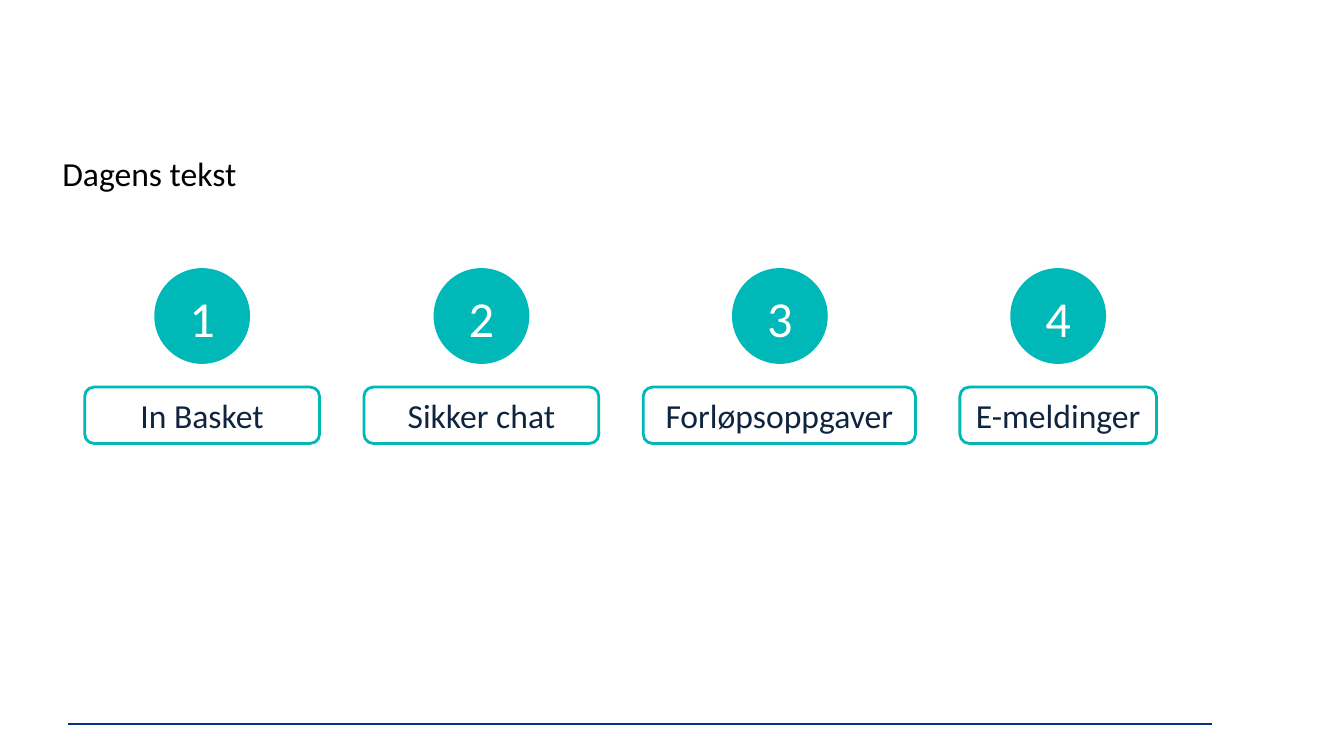
"""Build a slide with four numbered topics for the day."""
from lxml import etree
from pptx import Presentation
from pptx.dml.color import RGBColor
from pptx.enum.shapes import MSO_CONNECTOR, MSO_SHAPE
from pptx.enum.text import MSO_ANCHOR, PP_ALIGN
from pptx.oxml.ns import qn
from pptx.util import Pt

PX = 9144
TEAL = "00B8B7"
NAVY = "0F243E"
WHITE = "FFFFFF"
LEFT, CENTER = PP_ALIGN.LEFT, PP_ALIGN.CENTER
TOP, MIDDLE = MSO_ANCHOR.TOP, MSO_ANCHOR.MIDDLE
OVAL, ROUNDED = MSO_SHAPE.OVAL, MSO_SHAPE.ROUNDED_RECTANGLE


def rgb(color):
    return RGBColor.from_string(color)


def write(sp, text, size=24, color=NAVY, align=CENTER, anchor=MIDDLE):
    tf = sp.text_frame
    tf.word_wrap = True
    tf.vertical_anchor = anchor
    p = tf.paragraphs[0]
    p.alignment = align
    r = p.add_run()
    r.text = text
    r.font.name = "Calibri"
    r.font.size = Pt(size)
    r.font.color.rgb = rgb(color)


prs = Presentation()
prs.slide_width = 1333 * PX
prs.slide_height = 750 * PX
s = prs.slides.add_slide(prs.slide_layouts[6])

rule = s.shapes.add_connector(MSO_CONNECTOR.STRAIGHT, 67 * PX, 718 * PX, 1202 * PX, 718 * PX)
rule.line.color.rgb = rgb("043585")
rule.line.width = Pt(1.25)
etree.SubElement(rule._element.spPr, qn("a:effectLst"))

heading = s.shapes.add_textbox(52 * PX, 147 * PX, 1167 * PX, 55 * PX)
write(heading, "Dagens tekst", color="000000", align=LEFT, anchor=TOP)

topics = [("In Basket", 233), ("Sikker chat", 233), ("Forløpsoppgaver", 270), ("E-meldinger", 195)]
gap, diameter, number_width = 44, 95, 99
left = 84
for number, (topic, width) in enumerate(topics, 1):
    group = s.shapes.add_group_shape()
    center = left + width // 2

    box = group.shapes.add_shape(ROUNDED, left * PX, 384 * PX, width * PX, 56 * PX)
    box.shadow.inherit = False
    box.fill.solid()
    box.fill.fore_color.rgb = rgb(WHITE)
    box.line.color.rgb = rgb(TEAL)
    box.line.width = Pt(2)
    write(box, topic)

    circle = group.shapes.add_shape(
        OVAL, (center - diameter // 2) * PX, 266 * PX, diameter * PX, diameter * PX)
    circle.shadow.inherit = False
    circle.fill.solid()
    circle.fill.fore_color.rgb = rgb(TEAL)
    circle.line.fill.background()

    label = group.shapes.add_textbox(
        (center - number_width // 2) * PX, 279 * PX, number_width * PX, 71 * PX)
    write(label, str(number), size=36, color=WHITE)

    left += width + gap

prs.save("out.pptx")
